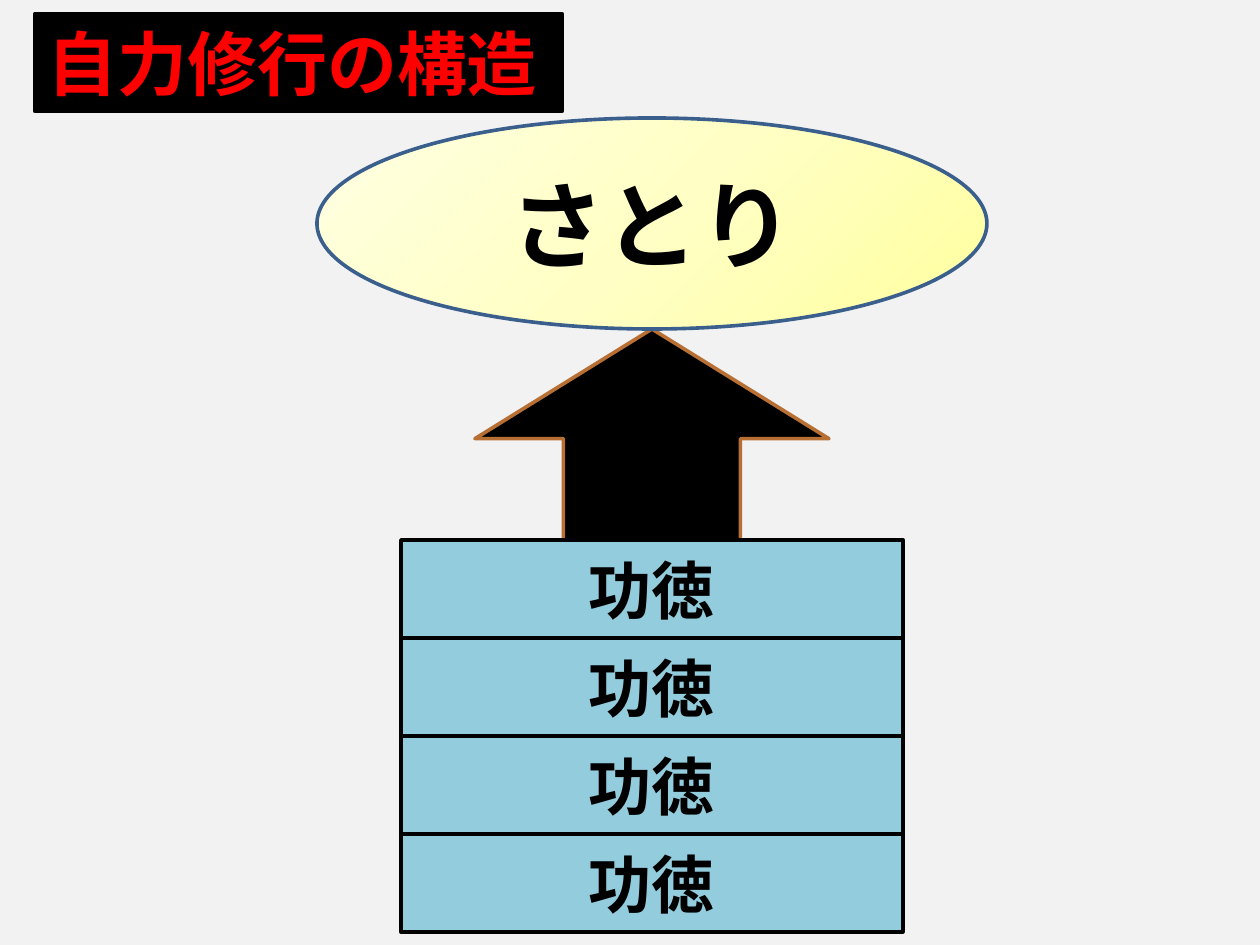
"""Build the slide on the structure of self-power practice."""
from copy import deepcopy

from pptx import Presentation
from pptx.dml.color import RGBColor
from pptx.enum.shapes import MSO_SHAPE as SHAPE
from pptx.enum.text import MSO_ANCHOR as ANCHOR, MSO_AUTO_SIZE as AUTO, PP_ALIGN as ALIGN
from pptx.oxml.ns import qn
from pptx.util import Pt

TITLE = "自力修行の構造"
GOAL = "さとり"
MERITS = ["功徳"] * 4

FONT = "Noto Sans CJK JP"
BLACK = RGBColor(0x00, 0x00, 0x00)
RED = RGBColor(0xFF, 0x00, 0x00)
PAPER = RGBColor(0xF2, 0xF2, 0xF2)
AQUA = RGBColor(0x93, 0xCD, 0xDD)
BROWN = RGBColor(0xB7, 0x6F, 0x34)
NAVY = RGBColor(0x3A, 0x5F, 0x8C)
GLOW = [RGBColor(0xFF, 0xFF, 0xA0), RGBColor(0xFF, 0xFF, 0xC5), RGBColor(0xFF, 0xFF, 0xE3)]

PX = 914400 // 126
STACK_X, STACK_Y, STACK_W, BAR_H = 401, 540, 502, 98


def add_shape(kind, box, fill, line, width=2.08):
    s = slide.shapes.add_shape(kind, *(v * PX for v in box))
    s.shadow.inherit = False
    s.fill.solid()
    s.fill.fore_color.rgb = fill
    s.line.color.rgb = line
    s.line.width = Pt(width)
    return s


def add_text(s, text, size, color=BLACK, align=ALIGN.CENTER, anchor=ANCHOR.MIDDLE):
    tf = s.text_frame
    tf.word_wrap = True
    tf.vertical_anchor = anchor
    p = tf.paragraphs[0]
    p.alignment = align
    r = p.add_run()
    r.text = text
    r.font.size = Pt(size)
    r.font.bold = True
    r.font.name = FONT
    r.font.color.rgb = color
    ea = r.font._element.makeelement(qn("a:ea"), {"typeface": FONT})
    r.font._element.find(qn("a:latin")).addnext(ea)


def add_glow(s):
    s.fill.gradient()
    s.fill.gradient_angle = 135
    first = s._element.spPr.find(".//" + qn("a:gs"))
    first.addnext(deepcopy(first))
    for i, (stop, color) in enumerate(zip(s.fill.gradient_stops, GLOW)):
        stop.color.rgb = color
        stop.position = i / (len(GLOW) - 1)


prs = Presentation()
prs.slide_width, prs.slide_height = 1260 * PX, 945 * PX
slide = prs.slides.add_slide(prs.slide_layouts[6])
slide.background.fill.solid()
slide.background.fill.fore_color.rgb = PAPER

arrow = add_shape(SHAPE.UP_ARROW, (475, 329, 354, 211), BLACK, BROWN)
arrow.adjustments[0], arrow.adjustments[1] = 0.5, 0.52

goal = add_shape(SHAPE.OVAL, (317, 118, 670, 211), GLOW[0], NAVY)
add_glow(goal)
add_text(goal, GOAL, 54)

title = add_shape(SHAPE.RECTANGLE, (35, 14, 527, 97), BLACK, BLACK, 2.75)
add_text(title, TITLE, 40, RED, ALIGN.LEFT, ANCHOR.TOP)
title.text_frame.auto_size = AUTO.SHAPE_TO_FIT_TEXT

for i, merit in enumerate(MERITS):
    bar = add_shape(SHAPE.RECTANGLE, (STACK_X, STACK_Y + i * BAR_H, STACK_W, BAR_H), AQUA, BLACK)
    add_text(bar, merit, 36)

prs.save("out.pptx")
